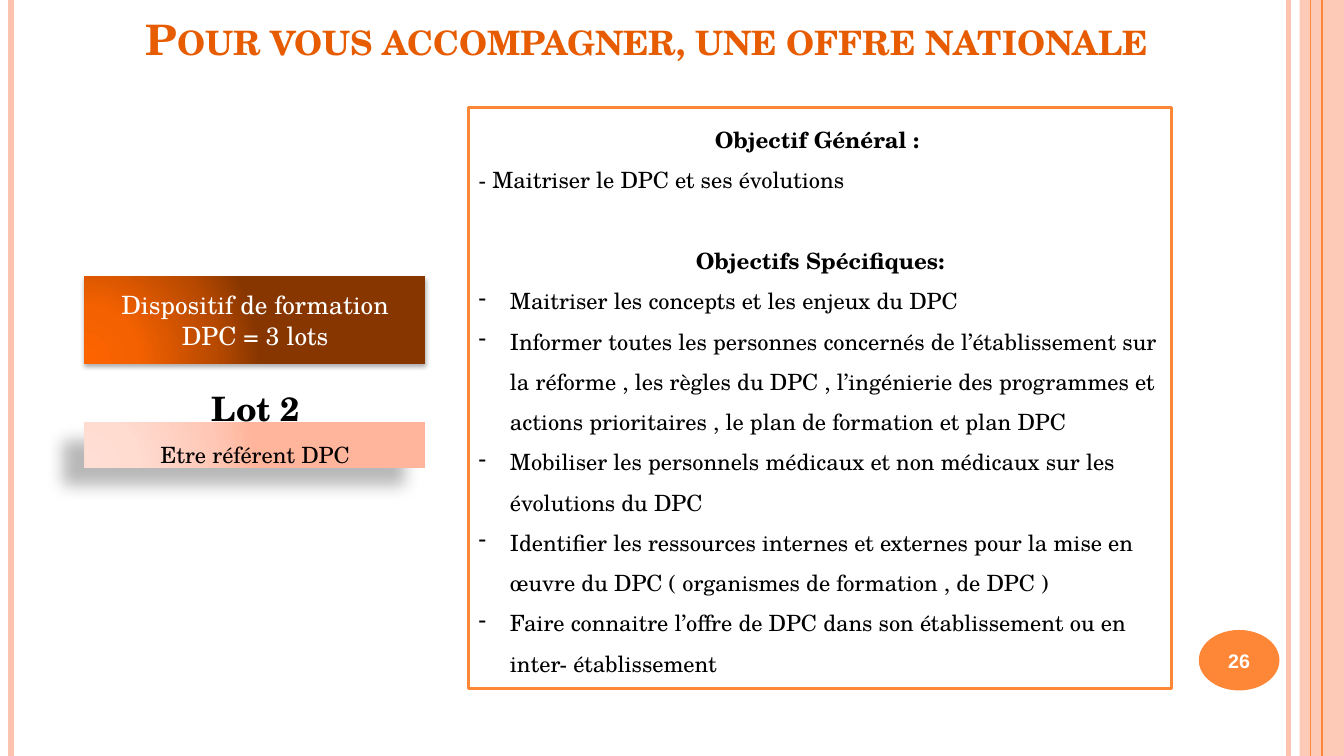
"""Build the slide presenting the national DPC training offer, lot 2."""
from lxml.etree import SubElement
from pptx import Presentation
from pptx.dml.color import RGBColor
from pptx.enum.shapes import MSO_CONNECTOR, MSO_SHAPE
from pptx.enum.text import MSO_ANCHOR, PP_ALIGN
from pptx.oxml import parse_xml
from pptx.oxml.ns import nsdecls, qn
from pptx.util import Inches, Pt

SERIF = "TeX Gyre Schola"
ORANGE = "FE8637"
PINK = "FEC3AE"


def color(value):
    """Turn a hex string into a colour."""
    return RGBColor.from_string(value)


def style(paragraph, size, value="000000", bold=False, align=PP_ALIGN.CENTER, font=SERIF):
    """Set the font and alignment of a paragraph."""
    paragraph.alignment = align
    paragraph.font.name = font
    paragraph.font.size = Pt(size)
    paragraph.font.bold = bold
    paragraph.font.color.rgb = color(value)


presentation = Presentation()
presentation.slide_width = Inches(13.33)
presentation.slide_height = Inches(7.5)
slide = presentation.slides.add_slide(presentation.slide_layouts[5])
shapes = slide.shapes

band = shapes.add_shape(MSO_SHAPE.RECTANGLE, Inches(12.89), 0, Inches(0.44), Inches(7.5))
band.shadow.inherit = False
band.fill.solid()
band.fill.fore_color.rgb = color(PINK)
band.line.fill.background()
band_color = band._element.spPr.find(qn("a:solidFill"))[0]
SubElement(band_color, qn("a:alpha"), val="87000")

for x, line_color, width in [
    (12.78, PINK, 3),
    (0.11, PINK, 4.5),
    (13.11, ORANGE, 1.5),
    (13, ORANGE, 0.75),
]:
    rule = shapes.add_connector(
        MSO_CONNECTOR.STRAIGHT, Inches(x), 0, Inches(x), Inches(7.5)
    )
    rule.line.color.rgb = color(line_color)
    rule.line.width = Pt(width)
    SubElement(rule._element.spPr, qn("a:effectLst"))

badge = shapes.add_shape(
    MSO_SHAPE.OVAL, Inches(11.89), Inches(6.25), Inches(0.8), Inches(0.6)
)
badge.shadow.inherit = False
badge.fill.solid()
badge.fill.fore_color.rgb = color(ORANGE)
badge.line.fill.background()
badge.text_frame.text = "26"
badge.text_frame.vertical_anchor = MSO_ANCHOR.MIDDLE
style(badge.text_frame.paragraphs[0], 14, "FFFFFF", True, font="Arial")

title = shapes.title
title.left, title.top = Inches(0.97), Inches(0.11)
title.width, title.height = Inches(10.89), Inches(0.57)
title.text_frame.text = "Pour vous accompagner, une offre nationale"
title.text_frame.vertical_anchor = MSO_ANCHOR.BOTTOM
heading = title.text_frame.paragraphs[0]
style(heading, 30, "E75C01", True)
heading.runs[0].font._element.set("cap", "small")

cards = [
    ("Etre référent DPC", 4.19, 0.45, 16, "000000", 1.5, MSO_ANCHOR.TOP,
     ["FFDED5", "FFDBD0", "FFC8B6", "FFB59B"], (28, 11.8, 19.7, 141)),
    ("Dispositif de formation DPC = 3 lots", 2.74, 0.87, 18, "FFFFFF", 1, MSO_ANCHOR.MIDDLE,
     ["FD6400", "F46100", "B74900", "873600"], (32, 3.5, 2.2, 90)),
]
for text, top, height, size, text_color, spacing, anchor, stops, shadow in cards:
    card = shapes.add_shape(
        MSO_SHAPE.RECTANGLE, Inches(0.84), Inches(top), Inches(3.38), Inches(height)
    )
    card.shadow.inherit = False
    card.line.fill.background()
    card.fill.solid()
    properties = card._element.spPr
    stop_xml = "".join(
        f'<a:gs pos="{position}000"><a:srgbClr val="{stop}"/></a:gs>'
        for position, stop in zip((0, 30, 75, 100), stops)
    )
    gradient = parse_xml(
        f'<a:gradFill {nsdecls("a")} rotWithShape="1"><a:gsLst>{stop_xml}</a:gsLst>'
        '<a:path path="circle"><a:fillToRect l="5000" t="100000" r="120000" b="10000"/>'
        "</a:path></a:gradFill>"
    )
    properties.replace(properties.find(qn("a:solidFill")), gradient)
    alpha, blur, distance, angle = shadow
    properties.find(qn("a:effectLst")).append(parse_xml(
        f'<a:outerShdw {nsdecls("a")} blurRad="{Pt(blur)}" dist="{Pt(distance)}" '
        f'dir="{angle * 60000}" algn="ctr" rotWithShape="0"><a:srgbClr val="000000">'
        f'<a:alpha val="{alpha * 1000}"/></a:srgbClr></a:outerShdw>'
    ))
    card.text_frame.text = text
    card.text_frame.word_wrap = True
    card.text_frame.vertical_anchor = anchor
    style(card.text_frame.paragraphs[0], size, text_color)
    card.text_frame.paragraphs[0].line_spacing = spacing

lot = shapes.add_textbox(Inches(1.94), Inches(3.8), Inches(1.19), Inches(0.5))
lot.text_frame.word_wrap = True
lot.text_frame.text = "Lot 2"
style(lot.text_frame.paragraphs[0], 24, bold=True)

panel = shapes.add_shape(
    MSO_SHAPE.RECTANGLE, Inches(4.65), Inches(1.07), Inches(6.97), Inches(5.76)
)
panel.shadow.inherit = False
panel.fill.solid()
panel.fill.fore_color.rgb = color("FFFFFF")
panel.line.color.rgb = color(ORANGE)
panel.line.width = Pt(2)
frame = panel.text_frame
frame.word_wrap = True
frame.vertical_anchor = MSO_ANCHOR.TOP
objectives = [
    ("heading", "Objectif Général : "),
    ("plain", "- Maitriser le DPC et ses évolutions"),
    ("heading", "Objectifs Spécifiques:"),
    ("bullet", "Maitriser les concepts et les enjeux du DPC"),
    ("bullet", "Informer toutes les personnes concernés de l’établissement sur la réforme , "
     "les règles du DPC , l’ingénierie des programmes et actions prioritaires , "
     "le plan de formation et plan DPC"),
    ("bullet", "Mobiliser les personnels médicaux et non médicaux sur les évolutions du DPC"),
    ("bullet", "Identifier les ressources internes et externes pour la mise en œuvre du DPC "
     "( organismes de formation , de DPC )"),
    ("bullet", "Faire connaitre l’offre de DPC dans son établissement ou en "
     "inter- établissement"),
]
frame.text = "\n".join(text for kind, text in objectives)
for paragraph, (kind, text) in zip(frame.paragraphs, objectives):
    is_heading = kind == "heading"
    style(paragraph, 16, bold=is_heading,
          align=PP_ALIGN.CENTER if is_heading else PP_ALIGN.LEFT)
    paragraph.line_spacing = 1.5
    if kind == "bullet":
        paragraph_properties = paragraph._p.get_or_add_pPr()
        paragraph_properties.set("marL", str(Inches(0.31)))
        paragraph_properties.set("indent", str(-Inches(0.31)))
        bullet = parse_xml(f'<a:buChar {nsdecls("a")} char="-"/>')
        paragraph_properties.find(qn("a:lnSpc")).addnext(bullet)
frame.paragraphs[2].space_before = Pt(28.8)

presentation.save("out.pptx")
